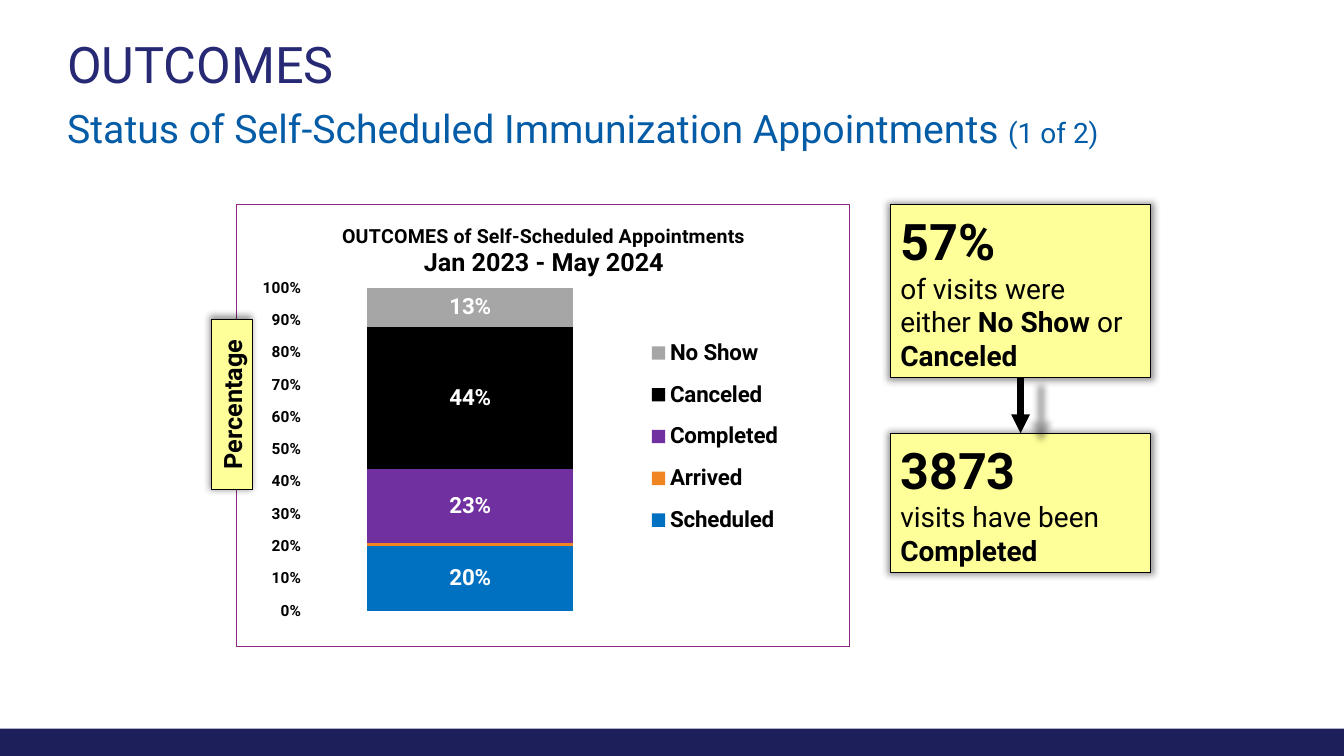
"""Build the slide on outcomes of self-scheduled immunization appointments."""
from lxml.etree import SubElement
from pptx import Presentation
from pptx.chart.data import CategoryChartData
from pptx.dml.color import RGBColor
from pptx.enum.chart import XL_CHART_TYPE, XL_LEGEND_POSITION, XL_TICK_MARK
from pptx.enum.shapes import MSO_CONNECTOR, MSO_SHAPE
from pptx.enum.text import MSO_ANCHOR, MSO_AUTO_SIZE, PP_ALIGN
from pptx.oxml import parse_xml
from pptx.oxml.ns import nsdecls, qn
from pptx.util import Pt

FONT = "Roboto"


def rgb(hex_color):
    return RGBColor.from_string(hex_color)


def write(paragraph, text, size=20, color="000000", bold=False):
    run = paragraph.add_run()
    run.text = text
    run.font.name = FONT
    run.font.size = Pt(size)
    run.font.bold = bold
    run.font.color.rgb = rgb(color)


presentation = Presentation()
presentation.slide_width, presentation.slide_height = Pt(960), Pt(540)
slide = presentation.slides.add_slide(presentation.slide_layouts[1])

footer = slide.shapes.add_shape(MSO_SHAPE.RECTANGLE, Pt(0), Pt(520.5), Pt(960), Pt(19.5))
footer.shadow.inherit = False
footer.fill.solid()
footer.fill.fore_color.rgb = rgb("1D1F5B")
footer.line.fill.background()

heading, subheading = slide.shapes.title, slide.placeholders[1]
for holder, top, height, anchor in [
    (heading, 27.5, 41, MSO_ANCHOR.MIDDLE),
    (subheading, 78, 29, MSO_ANCHOR.TOP),
]:
    holder.left, holder.top, holder.width, holder.height = Pt(48), Pt(top), Pt(868), Pt(height)
    frame = holder.text_frame
    frame.margin_left = frame.margin_right = frame.margin_top = frame.margin_bottom = 0
    frame.auto_size = MSO_AUTO_SIZE.NONE
    frame.vertical_anchor = anchor
    line = frame.paragraphs[0]
    properties = line._p.get_or_add_pPr()
    properties.set("marL", "0")
    properties.set("indent", "0")
    SubElement(properties, qn("a:buNone"))
    line.alignment = PP_ALIGN.LEFT
    line.line_spacing = 0.9
    line.space_before = Pt(0)
write(heading.text_frame.paragraphs[0], "OUTCOMES", size=36, color="272974")
subheading_line = subheading.text_frame.paragraphs[0]
write(subheading_line, "Status of Self-Scheduled Immunization Appointments ", size=28, color="045CA7")
write(subheading_line, "(1 of 2)", color="045CA7")

statuses = [
    ("Scheduled", 0.2, "0070C0"),
    ("Arrived", 0.01, "F08521"),
    ("Completed", 0.23, "7030A0"),
    ("Canceled", 0.44, "000000"),
    ("No Show", 0.13, "A6A6A6"),
]
status_data = CategoryChartData(number_format="0%")
status_data.categories = ["1"]
for status, share, color in statuses:
    status_data.add_series(status, [share])
chart = slide.shapes.add_chart(
    XL_CHART_TYPE.COLUMN_STACKED, Pt(168.5), Pt(145.5), Pt(439), Pt(317), status_data
).chart
chart.font.name = FONT
chart.font.size = Pt(10)
chart.font.color.rgb = rgb("000000")
chart._chartSpace.chart.addnext(parse_xml(
    f'<c:spPr {nsdecls("c", "a")}><a:solidFill><a:srgbClr val="FFFFFF"/></a:solidFill>'
    '<a:ln w="12700"><a:solidFill><a:srgbClr val="902681"/></a:solidFill></a:ln></c:spPr>'
))

chart.has_title = True
chart_title = chart.chart_title.text_frame
write(chart_title.paragraphs[0], "OUTCOMES of Self-Scheduled Appointments", size=14, bold=True)
write(chart_title.add_paragraph(), "Jan 2023 - May 2024", size=18, bold=True)
chart.chart_title.include_in_layout = False

chart.has_legend = True
chart.legend.position = XL_LEGEND_POSITION.RIGHT
chart.legend.include_in_layout = False

chart.category_axis.visible = False
percent_axis = chart.value_axis
percent_axis.minimum_scale, percent_axis.maximum_scale = 0, 1
percent_axis.major_unit = 0.1
percent_axis.has_major_gridlines = False
percent_axis.major_tick_mark = XL_TICK_MARK.NONE
percent_axis.format.line.fill.background()
percent_axis.tick_labels.number_format = "0%"
percent_axis.tick_labels.number_format_is_linked = False

plot = chart.plots[0]
plot.gap_width, plot.overlap = 60, 100
plot.vary_by_categories = False
label_fonts = [(percent_axis.tick_labels.font, 11, "000000"), (chart.legend.font, 16, "000000")]
for series, (status, share, color) in zip(plot.series, statuses):
    series.format.fill.solid()
    series.format.fill.fore_color.rgb = rgb(color)
    if status != "Arrived":
        labels = series.data_labels
        labels.show_value = True
        labels.number_format = "0%"
        labels.number_format_is_linked = False
        label_fonts.append((labels.font, 16, "FFFFFF"))
for font, size, color in label_fonts:
    font.name = FONT
    font.size = Pt(size)
    font.bold = True
    font.color.rgb = rgb(color)

chart_xml = chart._chartSpace.chart
for part, target, places in [
    (chart_xml.find(qn("c:title")), "", {"x": 0.167, "y": 0.035}),
    (chart_xml.plotArea, "inner", {"x": 0.112, "y": 0.189, "w": 0.538, "h": 0.73}),
    (chart_xml.find(qn("c:legend")), "", {"x": 0.66, "y": 0.27, "w": 0.24, "h": 0.51}),
]:
    for automatic in part.findall(qn("c:layout")):
        part.remove(automatic)
    layout = parse_xml(f'<c:layout {nsdecls("c")}/>')
    manual = SubElement(layout, qn("c:manualLayout"))
    if target:
        SubElement(manual, qn("c:layoutTarget")).set("val", target)
    for side in "xy":
        SubElement(manual, qn(f"c:{side}Mode")).set("val", "edge")
    for side, place in places.items():
        SubElement(manual, qn(f"c:{side}")).set("val", str(place))
    part.insert(0 if target else 1, layout)

callouts = []
for left, top, width, height, rotation, alignment, lines in [
    (105, 274.5, 121.5, 29, 270, PP_ALIGN.CENTER, [[("Percentage", 18, True)]]),
    (636, 146, 186, 124, 0, PP_ALIGN.LEFT, [
        [("57%", 36, True)],
        [("of visits were either ", 20, False), ("No Show ", 20, True),
         ("or ", 20, False), ("Canceled", 20, True)],
    ]),
    (636, 309.5, 186, 99.5, 0, PP_ALIGN.LEFT, [
        [("3873", 36, True)], [("visits have been", 20, False)], [("Completed", 20, True)],
    ]),
]:
    callout = slide.shapes.add_shape(MSO_SHAPE.RECTANGLE, Pt(left), Pt(top), Pt(width), Pt(height))
    callout.rotation = rotation
    callout.fill.solid()
    callout.fill.fore_color.rgb = rgb("FFFF99")
    callout.line.color.rgb = rgb("000000")
    callout.line.width = Pt(0.75)
    frame = callout.text_frame
    frame.word_wrap = True
    frame.vertical_anchor = MSO_ANCHOR.MIDDLE
    for index, pieces in enumerate(lines):
        paragraph = frame.add_paragraph() if index else frame.paragraphs[0]
        paragraph.alignment = alignment
        for text, size, bold in pieces:
            write(paragraph, text, size=size, bold=bold)
    callouts.append(callout)

percentage, missed, completed = callouts
arrow = slide.shapes.add_connector(MSO_CONNECTOR.STRAIGHT, Pt(729), Pt(270), Pt(729), Pt(309.5))
arrow.begin_connect(missed, 2)
arrow.end_connect(completed, 0)
arrow.line.color.rgb = rgb("000000")
arrow.line.width = Pt(4.5)
SubElement(arrow.line._get_or_add_ln(), qn("a:tailEnd")).set("type", "triangle")

for shaded in [*callouts, arrow]:
    shaded._element.spPr.append(parse_xml(
        f'<a:effectLst {nsdecls("a")}><a:outerShdw blurRad="63500" sx="102000" sy="102000" '
        'algn="ctr" rotWithShape="0"><a:srgbClr val="000000"><a:alpha val="40000"/></a:srgbClr>'
        '</a:outerShdw></a:effectLst>'
    ))

presentation.save("out.pptx")
